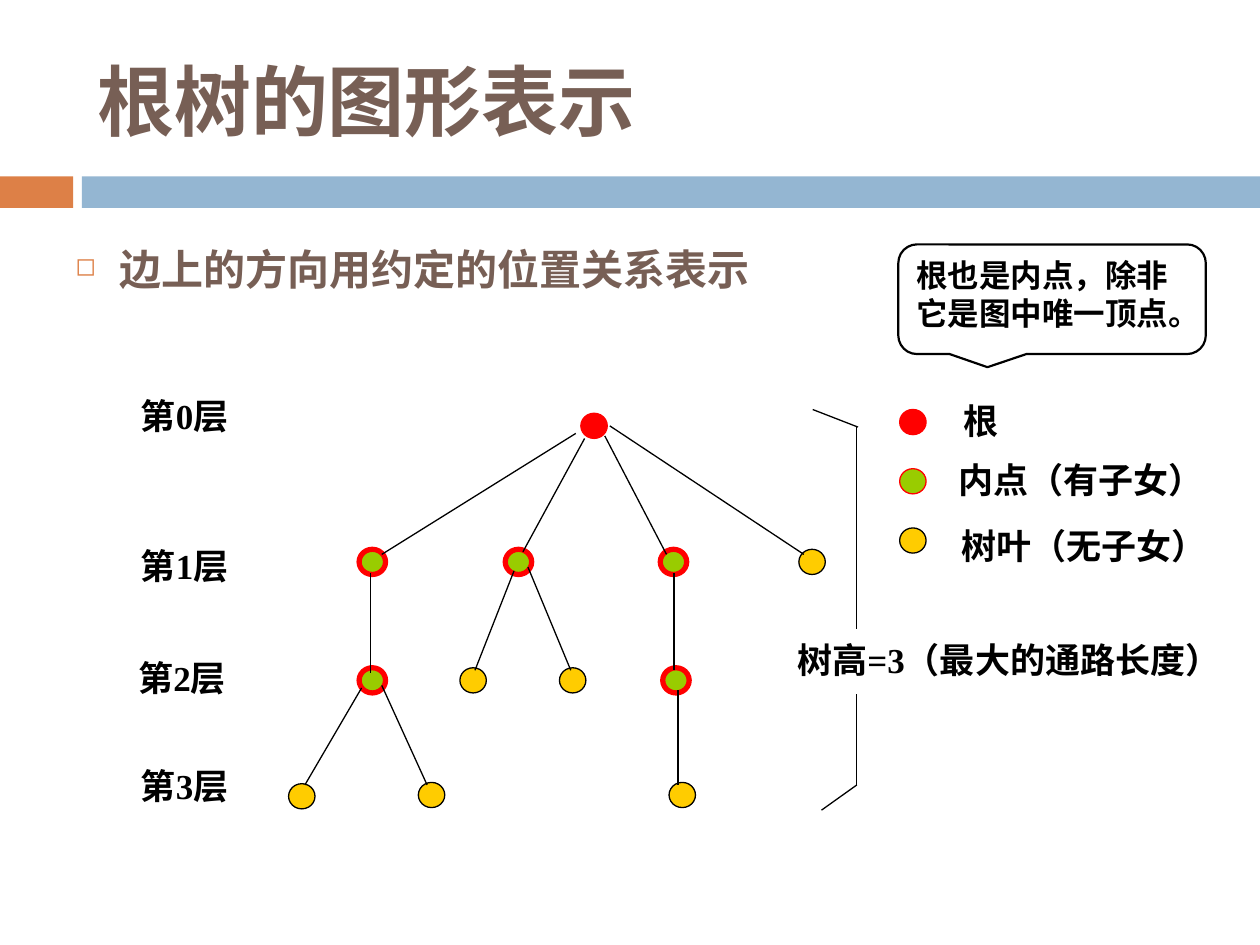
from lxml import etree
from pptx import Presentation
from pptx.dml.color import RGBColor
from pptx.enum.shapes import MSO_CONNECTOR, MSO_SHAPE
from pptx.enum.text import MSO_ANCHOR, PP_ALIGN
from pptx.oxml.ns import qn
from pptx.util import Inches, Pt

RECT, OVAL = MSO_SHAPE.RECTANGLE, MSO_SHAPE.OVAL
CALLOUT = MSO_SHAPE.ROUNDED_RECTANGULAR_CALLOUT
STRAIGHT = MSO_CONNECTOR.STRAIGHT
LEFT, JUSTIFY = PP_ALIGN.LEFT, PP_ALIGN.JUSTIFY
TOP, MIDDLE = MSO_ANCHOR.TOP, MSO_ANCHOR.MIDDLE

THEME = {
    "orange": RGBColor.from_string("DD8047"),
    "blue": RGBColor.from_string("94B6D2"),
    "brown": RGBColor.from_string("775F55"),
    "black": RGBColor.from_string("000000"),
    "red": RGBColor.from_string("FF0000"),
    "green": RGBColor.from_string("99CC00"),
    "yellow": RGBColor.from_string("FFCC00"),
    "heading": "Calibri",
    "label": "Times New Roman",
    "note": "Arial",
    "title_size": 44,
    "body_size": 24,
    "label_size": 20,
    "note_size": 18,
}

prs = Presentation()
prs.slide_width, prs.slide_height = Inches(10), Inches(7.5)
slide = prs.slides.add_slide(prs.slide_layouts[5])
shapes = slide.shapes


def write(frame, text, font, size, color, align, anchor=TOP):
    frame.text = text
    frame.word_wrap = True
    frame.vertical_anchor = anchor
    paragraph = frame.paragraphs[0]
    paragraph.alignment = align
    style = paragraph.runs[0].font
    style.name, style.size, style.bold = THEME[font], Pt(THEME[size]), True
    style.color.rgb = THEME[color]


def draw(kind, left, top, width, height, fill, outline=None, weight=0.75):
    shape = shapes.add_shape(kind, Inches(left), Inches(top), Inches(width), Inches(height))
    shape.shadow.inherit = False
    if fill:
        shape.fill.solid()
        shape.fill.fore_color.rgb = THEME[fill]
    else:
        shape.fill.background()
    if outline:
        shape.line.color.rgb = THEME[outline]
        shape.line.width = Pt(weight)
    else:
        shape.line.fill.background()
    return shape


draw(RECT, 0, 1.4, 0.58, 0.25, "orange")
draw(RECT, 0.65, 1.4, 9.35, 0.25, "blue")

title = shapes.title
title.left, title.top = Inches(0.67), Inches(0.25)
title.width, title.height = Inches(8.92), Inches(1.08)
write(title.text_frame, "根树的图形表示", "heading", "title_size", "brown", LEFT, MIDDLE)

statement = shapes.add_textbox(Inches(0.5), Inches(1.88), Inches(6.07), Inches(0.61)).text_frame
write(statement, "边上的方向用约定的位置关系表示", "heading", "body_size", "brown", LEFT)
statement.paragraphs[0].space_before = Pt(7)
bullet = statement.paragraphs[0]._p.get_or_add_pPr()
bullet.set("marL", str(Inches(0.35)))
bullet.set("indent", str(-Inches(0.35)))
bullet_color = etree.SubElement(bullet, qn("a:buClr"))
etree.SubElement(bullet_color, qn("a:srgbClr")).set("val", str(THEME["orange"]))
etree.SubElement(bullet, qn("a:buSzPct")).set("val", "60000")
etree.SubElement(bullet, qn("a:buChar")).set("char", "◻")

INNER = ("green", "red", 3)
LEAF = ("yellow", "black", 0.75)
ROOT = ("red", "red", 0.75)
INNER_KEY = ("green", "red", 0.75)
nodes = [
    (2.85, 4.36, INNER), (4.01, 4.36, INNER), (5.24, 4.36, INNER), (6.34, 4.36, LEAF),
    (2.85, 5.3, INNER), (3.65, 5.3, LEAF), (4.44, 5.3, LEAF), (5.26, 5.3, INNER),
    (2.29, 6.22, LEAF), (3.32, 6.21, LEAF), (5.31, 6.21, LEAF),
    (7.14, 3.25, ROOT), (7.14, 3.72, INNER_KEY), (7.14, 4.19, LEAF),
]
for left, top, look in nodes:
    draw(OVAL, left, top, 0.21, 0.2, *look)

tree_edges = [
    (4.57, 3.44, 3.03, 4.4), (4.64, 3.48, 4.15, 4.38),
    (4.8, 3.46, 5.29, 4.4), (4.84, 3.38, 6.38, 4.4),
    (2.94, 4.55, 2.94, 5.34), (4.08, 4.53, 3.77, 5.32),
    (4.19, 4.5, 4.53, 5.32), (5.35, 4.55, 5.35, 5.32),
    (2.87, 5.46, 2.42, 6.23), (3.03, 5.44, 3.39, 6.23), (5.38, 5.48, 5.38, 6.23),
]
height_bracket = [
    (6.8, 3.38, 6.8, 4.99), (6.8, 5.51, 6.8, 6.24),
    (6.81, 3.39, 6.45, 3.25), (6.8, 6.23, 6.52, 6.43),
]
for ends in tree_edges + height_bracket:
    edge = shapes.add_connector(STRAIGHT, *map(Inches, ends))
    edge.line.color.rgb = THEME["black"]
    edge.line.width = Pt(0.75)
    etree.SubElement(edge._element.spPr, qn("a:effectLst"))

labels = [
    ("根", 7.55, 3.12, 2.28, 0.56),
    ("内点（有子女）", 7.51, 3.59, 2.49, 0.56),
    ("树叶（无子女）", 7.53, 4.11, 2.47, 0.56),
    ("第0层", 1.02, 3.08, 1.47, 0.48),
    ("第1层", 1.02, 4.27, 1.47, 0.48),
    ("第2层", 1, 5.16, 1.47, 0.48),
    ("第3层", 1.02, 6.02, 1.47, 0.48),
    ("树高=3（最大的通路长度）", 6.23, 5.02, 3.57, 0.56),
]
for text, *place in labels:
    label = shapes.add_textbox(*map(Inches, place))
    write(label.text_frame, text, "label", "label_size", "black", JUSTIFY)

draw(OVAL, 4.61, 3.28, 0.21, 0.2, *ROOT)

root_note = draw(CALLOUT, 7.13, 1.94, 2.44, 0.87, None, "black", 1.25)
for index, value in enumerate((-0.21, 0.62, 0.17)):
    root_note.adjustments[index] = value
write(root_note.text_frame, "根也是内点，除非它是图中唯一顶点。", "note", "note_size", "black", LEFT)

prs.save("out.pptx")
